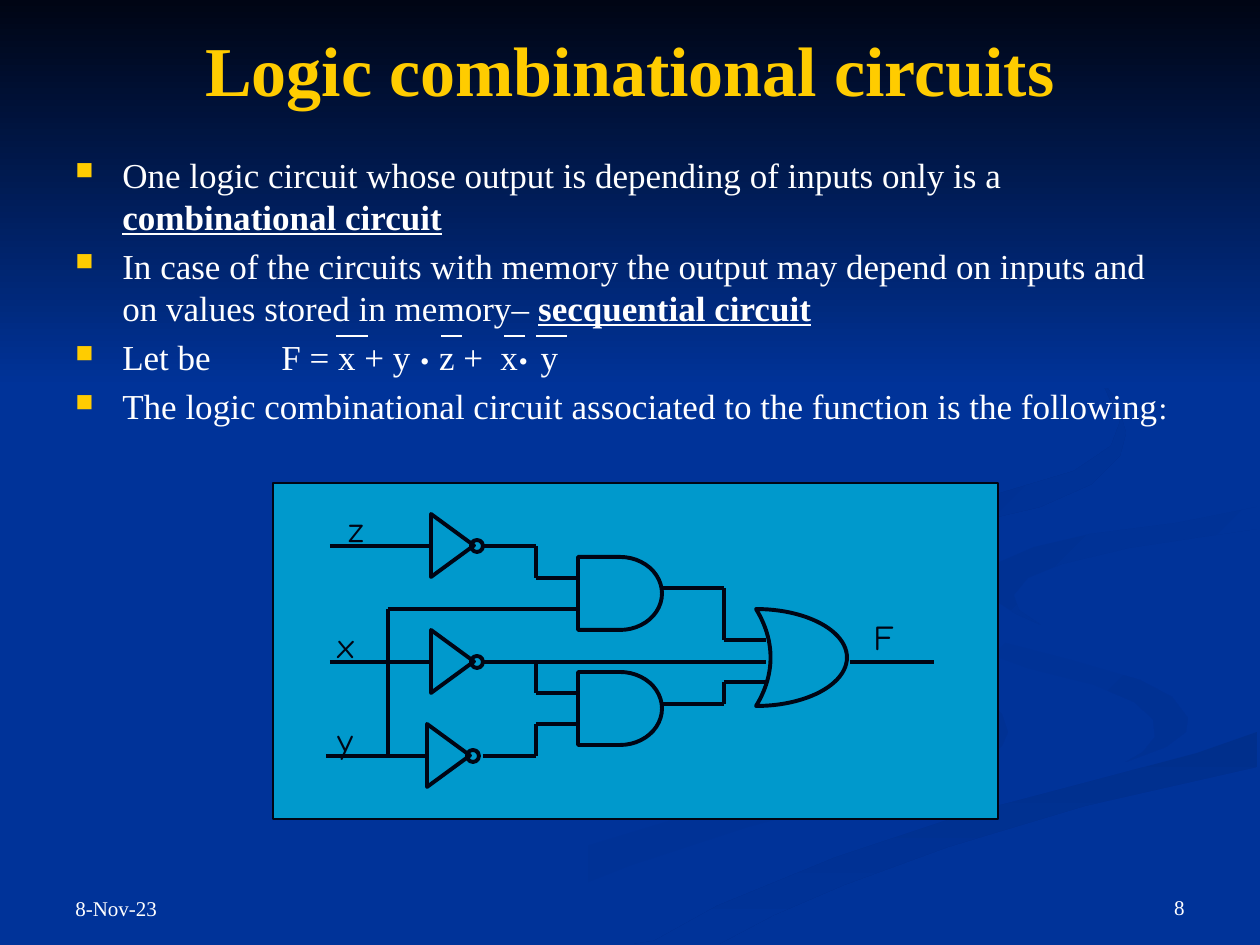
import itertools

import pptx
import pptx.dml.color
import pptx.enum.shapes
import pptx.enum.text
import pptx.oxml
import pptx.oxml.ns
import pptx.util

RGBColor = pptx.dml.color.RGBColor
Shapes = pptx.enum.shapes.MSO_SHAPE
Align = pptx.enum.text.PP_ALIGN
Anchor = pptx.enum.text.MSO_ANCHOR

NAVY = RGBColor(0x00, 0x33, 0x99)
INK = RGBColor(0x00, 0x05, 0x14)
GOLD = RGBColor(0xFF, 0xCC, 0x00)
WHITE = RGBColor(0xFF, 0xFF, 0xFF)
PANEL = RGBColor(0x00, 0x99, 0xCC)
WAVE_SOFT = RGBColor(0x00, 0x31, 0x93)
WAVE_DARK = RGBColor(0x00, 0x2F, 0x8C)

SERIF = "Times New Roman"
COMIC = "Comic Neue"
EMU_PER_PX = 914400 / 126
WIDTH, HEIGHT = 1260, 945

# Each wave: start colour, end colour, angle, outline points.
WAVES = [
    (NAVY, WAVE_SOFT, 0, [
        (984, 697), (939, 678), (859, 654), (789, 633), (748, 611), (726, 591), (725, 578),
        (718, 592), (732, 610), (770, 629), (856, 654), (934, 679), (984, 701), (990, 713),
        (983, 730), (944, 748), (881, 767), (776, 793), (679, 818), (577, 849), (474, 891),
        (378, 944), (455, 944), (543, 900), (629, 866), (748, 827), (852, 799), (932, 779),
        (983, 762), (1002, 746), (1008, 732), (1002, 714)]),
    (NAVY, WAVE_SOFT, 315, [
        (1188, 718), (1172, 697), (1140, 680), (1071, 660), (998, 641), (939, 617), (916, 597),
        (912, 585), (914, 597), (931, 622), (965, 645), (1027, 668), (1094, 685), (1134, 702),
        (1153, 719), (1155, 737), (1143, 752), (1126, 762), (1166, 747), (1186, 732)]),
    (WAVE_DARK, NAVY, 270, [
        (634, 944), (719, 944), (774, 915), (844, 885), (948, 847), (1085, 806), (1257, 767),
        (1257, 732), (1197, 753), (1092, 781), (963, 815), (834, 858), (717, 906), (654, 941)]),
    (WAVE_SOFT, NAVY, 315, [
        (984, 580), (990, 597), (1016, 614), (1041, 625), (1019, 610), (1014, 595), (1028, 578),
        (1062, 564), (1129, 548), (1202, 537), (1257, 529), (1257, 507), (1176, 523),
        (1090, 534), (1034, 547), (997, 563)]),
    (WAVE_DARK, NAVY, 315, [
        (861, 542), (963, 525), (1040, 507), (1092, 484), (1120, 456), (1126, 433), (1116, 398),
        (1089, 367), (1034, 329), (960, 294), (1014, 320), (1066, 352), (1104, 386), (1120, 422),
        (1111, 446), (1074, 471), (997, 494), (887, 515), (803, 532), (752, 551), (727, 582),
        (736, 604), (784, 630), (752, 605), (748, 586), (774, 564)]),
    (INK, NAVY, 270, [(0, 0), (WIDTH, 0), (WIDTH, 388), (0, 388)]),
]

KEY_TERM = {"bold": True, "underline": True}
DOT = {"name": COMIC}
BULLETS = [
    [("One logic circuit whose output is depending of inputs only is a ", {}),
     ("combinational circuit", KEY_TERM)],
    [("In case of the circuits with memory the output may depend on inputs and on values "
      "stored in memory– ", {}), ("secquential circuit", KEY_TERM)],
    [("Let be\tF = x + y ", {}), ("•", DOT), (" z +\tx", {}), ("• ", DOT), ("y", {})],
    [("The logic combinational circuit associated to the function is the following", {}),
     (":", {"size": pptx.util.Pt(18)})],
]
FORMULA_TABS = [206, 425]
OVERLINES = [(336, 368), (441, 462), (504, 525), (536, 567)]

INVERTERS = [(430, 546), (430, 662), (426, 756)]
AND_GATES = [557, 672]
WIRES = [
    [(330, 546), (430, 546)], [(330, 662), (430, 662)], [(326, 756), (426, 756)],
    [(388, 756), (388, 609), (578, 609)],
    [(483, 546), (536, 546), (536, 578), (578, 578)],
    [(483, 662), (766, 662)],
    [(536, 662), (536, 693), (578, 693)],
    [(483, 756), (536, 756), (536, 724), (578, 724)],
    [(662, 588), (724, 588), (724, 640), (766, 640)],
    [(662, 704), (724, 704), (724, 682), (766, 682)],
    [(850, 662), (934, 662)],
]
LABELS = [("z", 336, 501), ("x", 325, 617), ("y", 325, 712), ("F", 861, 609)]


def emu(px):
    return round(px * EMU_PER_PX)


def append_xml(parent, xml):
    namespace = pptx.oxml.ns.nsdecls("a")
    parent.append(pptx.oxml.parse_xml(xml.replace("/>", f" {namespace}/>", 1)
                                      if xml.count("<") == 1
                                      else xml.replace(">", f" {namespace}>", 1)))


class SlideBuilder:
    def __init__(self, slide):
        self.slide = slide
        self.style = {"name": SERIF, "size": pptx.util.Pt(20), "bold": False}

    def wave(self, start, end, angle, points):
        builder = self.slide.shapes.build_freeform(*points[0], scale=EMU_PER_PX)
        builder.add_line_segments(points[1:], close=True)
        shape = builder.convert_to_shape()
        shape.shadow.inherit = False
        shape.line.fill.background()
        shape.fill.gradient()
        shape.fill.gradient_angle = angle
        for stop, color in zip(shape.fill.gradient_stops, (start, end)):
            stop.color.rgb = color

    def shape(self, kind, box, fill=None, weight=2.25, rotation=0):
        shape = self.slide.shapes.add_shape(kind, *map(emu, box))
        shape.shadow.inherit = False
        shape.rotation = rotation
        shape.line.color.rgb = INK
        shape.line.width = pptx.util.Pt(weight)
        if fill is None:
            shape.fill.background()
        else:
            shape.fill.solid()
            shape.fill.fore_color.rgb = fill
        return shape

    def line(self, start, end, color, weight):
        connector = self.slide.shapes.add_connector(
            pptx.enum.shapes.MSO_CONNECTOR.STRAIGHT, *map(emu, start + end))
        connector.line.color.rgb = color
        connector.line.width = pptx.util.Pt(weight)
        append_xml(connector._element.spPr, "<a:effectLst/>")

    def wire(self, points):
        for start, end in itertools.pairwise(points):
            self.line(start, end, INK, 2 if start[0] == end[0] else 2.25)

    def run(self, paragraph, text, color=WHITE, **formats):
        run = paragraph.add_run()
        run.text = text
        run.font.color.rgb = color
        for attribute, value in (self.style | formats).items():
            setattr(run.font, attribute, value)

    def text(self, text, box, color=WHITE, anchor=Anchor.TOP, align=Align.LEFT, **formats):
        frame = self.slide.shapes.add_textbox(*map(emu, box)).text_frame
        frame.word_wrap = True
        frame.vertical_anchor = anchor
        frame.paragraphs[0].alignment = align
        self.run(frame.paragraphs[0], text, color, **formats)

    def title(self, text, box):
        title = self.slide.shapes.title
        title.left, title.top, title.width, title.height = map(emu, box)
        title.text_frame.vertical_anchor = Anchor.MIDDLE
        paragraph = title.text_frame.paragraphs[0]
        paragraph.alignment = Align.CENTER
        self.run(paragraph, text, GOLD, size=pptx.util.Pt(40), bold=True)

    def bullets(self, items, box):
        frame = self.slide.shapes.add_textbox(*map(emu, box)).text_frame
        frame.word_wrap = True
        tabs = "".join(f'<a:tab pos="{emu(tab)}" algn="l"/>' for tab in FORMULA_TABS)
        for index, runs in enumerate(items):
            paragraph = frame.add_paragraph() if index else frame.paragraphs[0]
            paragraph.space_before = pptx.util.Pt(4)
            properties = paragraph._p.get_or_add_pPr()
            properties.set("marL", str(emu(47)))
            properties.set("indent", str(emu(-47)))
            for xml in (f'<a:buClr><a:srgbClr val="{GOLD}"/></a:buClr>',
                        '<a:buSzPct val="70000"/>', '<a:buChar char="■"/>',
                        f"<a:tabLst>{tabs}</a:tabLst>"):
                append_xml(properties, xml)
            for text, formats in runs:
                self.run(paragraph, text, **formats)


def main():
    presentation = pptx.Presentation()
    presentation.slide_width, presentation.slide_height = emu(WIDTH), emu(HEIGHT)
    slide = presentation.slides.add_slide(presentation.slide_layouts[5])
    slide.background.fill.solid()
    slide.background.fill.fore_color.rgb = NAVY
    builder = SlideBuilder(slide)

    for wave in WAVES:
        builder.wave(*wave)
    # The title placeholder comes first on a new slide; bring it above the waves.
    slide.shapes._spTree.append(slide.shapes.title._element)
    builder.title("Logic combinational circuits", (0, -10, WIDTH, 157))
    small = {"anchor": Anchor.BOTTOM, "size": pptx.util.Pt(12)}
    builder.text("8-Nov-23", (63, 862, 147, 65), **small)
    builder.text("8", (1008, 861, 189, 65), align=Align.RIGHT, **small)
    builder.bullets(BULLETS, (63, 147, 1134, 624))
    for left, right in OVERLINES:
        builder.line((left, 336), (right, 336), WHITE, 0.75)

    builder.shape(Shapes.RECTANGLE, (273, 483, 725, 336), PANEL, 0.75)
    for left, middle in INVERTERS:
        builder.shape(Shapes.ISOSCELES_TRIANGLE, (left - 9, middle - 22, 63, 43), rotation=90)
        builder.shape(Shapes.OVAL, (left + 41, middle - 6, 12, 12))
    for top in AND_GATES:
        builder.shape(Shapes.FLOWCHART_DELAY, (578, top, 84, 73))
    or_gate = builder.shape(Shapes.MOON, (756, 609, 91, 97), rotation=180)
    or_gate.adjustments[0] = 0.84
    for wire in WIRES:
        builder.wire(wire)
    for letter, left, top in LABELS:
        builder.text(letter, (left, top, 63, 54), INK, name=COMIC)

    presentation.save("out.pptx")


if __name__ == "__main__":
    main()
